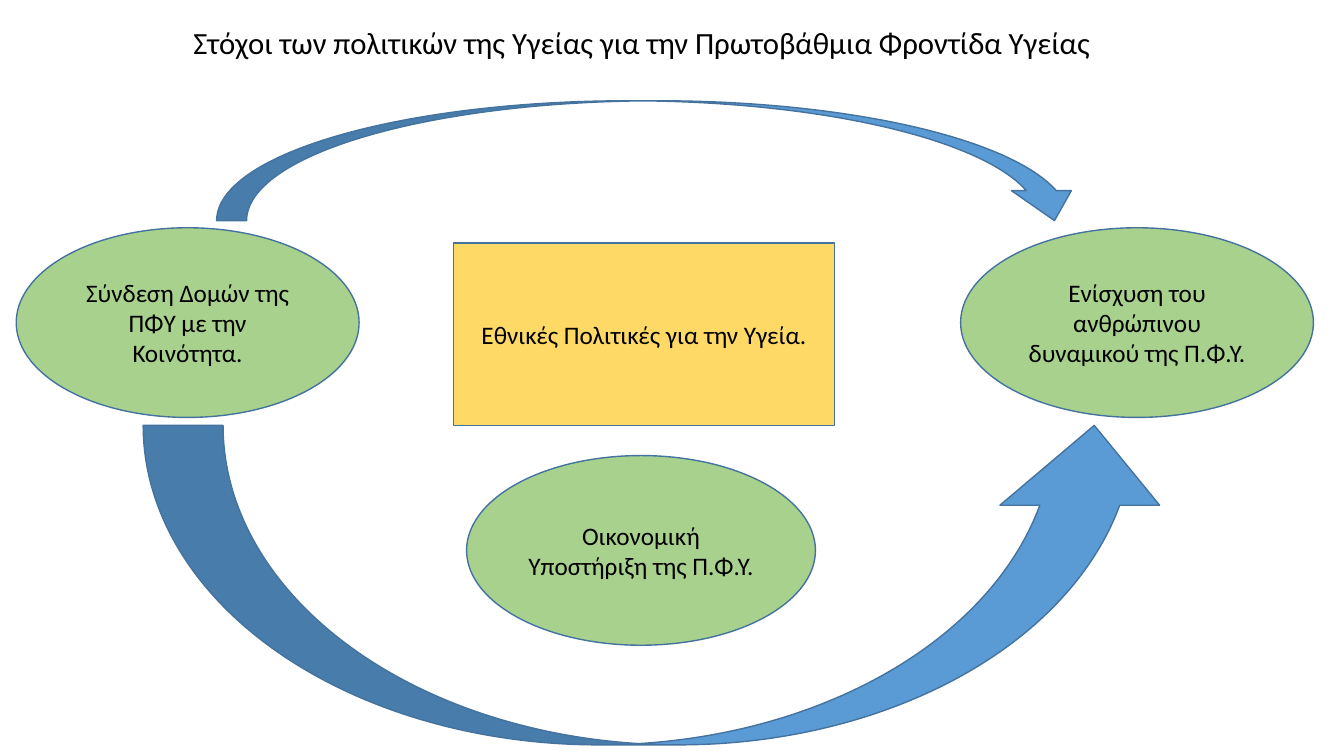
from dataclasses import dataclass

from pptx import Presentation
from pptx import util as u
from pptx.dml.color import RGBColor
from pptx.enum import shapes, text
from pptx.slide import Slide
from pptx.text.text import TextFrame

COLOURS = {
    "goal": "A9D18E",
    "policy": "FFD966",
    "arrow": "5B9BD5",
    "outline": "43739E",
    "text": "000000",
}
FONT = "Calibri"
KIND = shapes.MSO_SHAPE


@dataclass(frozen=True)
class Node:
    kind: shapes.MSO_SHAPE
    colour: str
    left: float
    top: float
    width: float
    height: float
    wording: str = ""


GOAL_TOP, GOAL_HEIGHT = 5.74, 4.78

NODES = [
    Node(KIND.OVAL, "goal", 0.41, GOAL_TOP, 8.64, GOAL_HEIGHT,
         "Σύνδεση Δομών της ΠΦΥ με την Κοινότητα."),
    Node(KIND.OVAL, "goal", 24.21, GOAL_TOP, 8.89, GOAL_HEIGHT,
         "Ενίσχυση του ανθρώπινου δυναμικού της Π.Φ.Υ."),
    Node(KIND.CURVED_DOWN_ARROW, "arrow", 5.46, 2.54, 21.87, 3.02),
    Node(KIND.OVAL, "goal", 11.76, 11.48, 8.79, GOAL_HEIGHT,
         "Οικονομική Υποστήριξη της Π.Φ.Υ."),
    Node(KIND.CURVED_UP_ARROW, "arrow", 3.61, 10.72, 25.98, 8.05),
    Node(KIND.RECTANGLE, "policy", 11.43, 6.12, 9.6, 4.6,
         "Εθνικές Πολιτικές για την Υγεία."),
]


def colour(name: str) -> RGBColor:
    return RGBColor.from_string(COLOURS[name])


def write(frame: TextFrame, wording: str, size: int,
          align: text.PP_ALIGN, anchor: text.MSO_ANCHOR) -> None:
    frame.text = wording
    frame.word_wrap = True
    frame.auto_size = text.MSO_AUTO_SIZE.NONE
    frame.vertical_anchor = anchor
    paragraph = frame.paragraphs[0]
    paragraph.alignment = align
    font = paragraph.runs[0].font
    font.name = FONT
    font.size = u.Pt(size)
    font.color.rgb = colour("text")


def draw_title(slide: Slide) -> None:
    heading = slide.shapes.title
    heading.left, heading.top = u.Cm(4.62), u.Cm(0.48)
    heading.width, heading.height = u.Cm(23.6), u.Cm(1.19)
    write(heading.text_frame,
          "Στόχοι των πολιτικών της Υγείας για την Πρωτοβάθμια Φροντίδα Υγείας",
          22, text.PP_ALIGN.LEFT, text.MSO_ANCHOR.TOP)


def draw_node(slide: Slide, node: Node) -> None:
    figure = slide.shapes.add_shape(
        node.kind, u.Cm(node.left), u.Cm(node.top),
        u.Cm(node.width), u.Cm(node.height))
    figure.shadow.inherit = False
    figure.fill.solid()
    figure.fill.fore_color.rgb = colour(node.colour)
    figure.line.color.rgb = colour("outline")
    figure.line.width = u.Pt(1)
    if node.wording:
        write(figure.text_frame, node.wording, 18,
              text.PP_ALIGN.CENTER, text.MSO_ANCHOR.MIDDLE)


def main() -> None:
    deck = Presentation()
    deck.slide_width, deck.slide_height = u.Cm(33.87), u.Cm(19.05)
    slide = deck.slides.add_slide(deck.slide_layouts.get_by_name("Title Only"))
    draw_title(slide)
    for node in NODES:
        draw_node(slide, node)
    deck.save("out.pptx")


if __name__ == "__main__":
    main()
